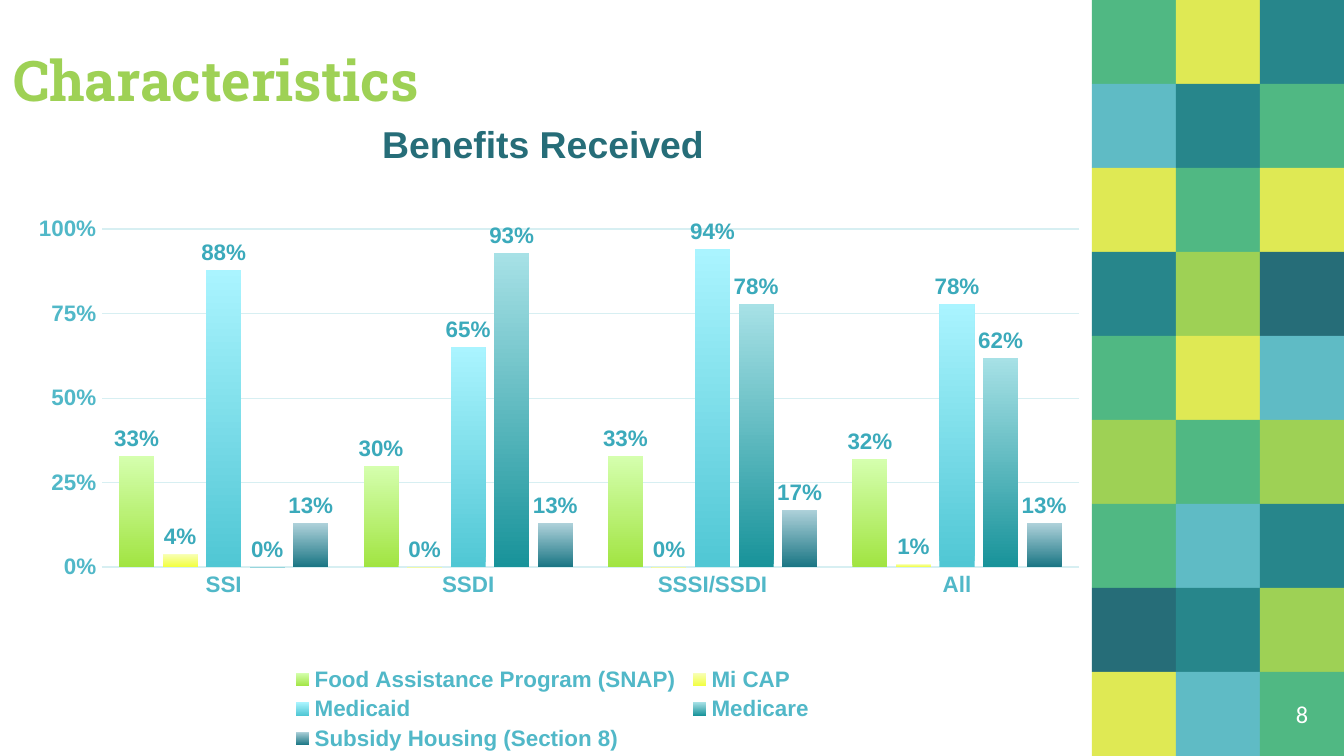
from lxml.etree import SubElement
from pptx import Presentation
from pptx.chart.data import CategoryChartData
from pptx.dml.color import RGBColor
from pptx.enum.chart import XL_CHART_TYPE as ChartType, XL_LABEL_POSITION as LabelPosition
from pptx.enum.chart import XL_LEGEND_POSITION as LegendPosition, XL_TICK_MARK as TickMark
from pptx.enum.shapes import MSO_SHAPE as Preset
from pptx.enum.text import MSO_ANCHOR as Anchor, PP_ALIGN as Align
from pptx.oxml.ns import qn
from pptx.util import Pt

GREEN = RGBColor(0x50, 0xB8, 0x83)
YELLOW = RGBColor(0xDF, 0xE9, 0x54)
TEAL = RGBColor(0x27, 0x86, 0x8B)
BLUE = RGBColor(0x5F, 0xBB, 0xC5)
LIME = RGBColor(0x9E, 0xD1, 0x55)
DARK = RGBColor(0x26, 0x6D, 0x78)
WHITE = RGBColor(0xFF, 0xFF, 0xFF)
AXIS_TEXT = RGBColor(0x51, 0xB8, 0xC8)
LABEL_TEXT = RGBColor(0x3B, 0xAA, 0xBB)
GRID = RGBColor(0xD7, 0xEF, 0xF2)

TILE = 45
MOSAIC_LEFT = 585
MOSAIC = [
    (GREEN, YELLOW, TEAL),
    (BLUE, TEAL, GREEN),
    (YELLOW, GREEN, YELLOW),
    (TEAL, LIME, DARK),
    (GREEN, YELLOW, BLUE),
    (LIME, GREEN, LIME),
    (GREEN, BLUE, TEAL),
    (DARK, TEAL, LIME),
    (YELLOW, BLUE, GREEN),
]

TEXTS = [
    ("Benefits Received", (0, 57.5, 582, 44), Anchor.TOP,
     {"alignment": Align.CENTER, "space_before": Pt(6)},
     {"name": "Arial", "size": Pt(20), "bold": True}, DARK),
    ("Characteristics", (0, 0, 505, 67.5), Anchor.BOTTOM,
     {"alignment": Align.LEFT},
     {"name": "Roboto Slab", "size": Pt(30), "bold": True}, LIME),
    ("8", (675, 360, TILE, TILE), Anchor.MIDDLE,
     {"alignment": Align.CENTER},
     {"name": "Calibri", "size": Pt(13), "bold": False}, WHITE),
]

CHART_BOX = (2, 109.5, 582, 295.5)
PLOT_LAYOUT = {"layoutTarget": "inner", "xMode": "edge", "yMode": "edge",
               "x": 0.09, "y": 0.045, "w": 0.9, "h": 0.613}
LEGEND_LAYOUT = {"xMode": "edge", "yMode": "edge",
                 "x": 0.26, "y": 0.83, "w": 0.49, "h": 0.17}
CATEGORIES = ["SSI", "SSDI", "SSSI/SSDI", "All"]
SERIES = [
    ("Food Assistance Program (SNAP)", (0.33, 0.3, 0.33, 0.32), ("A1E442", "D5FFAE")),
    ("Mi CAP", (0.04, 0, 0, 0.01), ("F2FF3E", "F8FFB8")),
    ("Medicaid", (0.88, 0.65, 0.94, 0.78), ("50C7D4", "AAF4FF")),
    ("Medicare", (0, 0.93, 0.78, 0.62), ("18939A", "A7E1E6")),
    ("Subsidy Housing (Section 8)", (0.13, 0.13, 0.17, 0.13), ("1A7684", "AED1DA")),
]
CHART_FONT = {"name": "Arial", "size": Pt(12), "bold": True}


def apply(target, values):
    for name, value in values.items():
        setattr(target, name, value)


def style_font(font, values, color):
    apply(font, values)
    font.color.rgb = color


def points(box):
    return [Pt(length) for length in box]


def add_mosaic(slide):
    for row, colors in enumerate(MOSAIC):
        for column, color in enumerate(colors):
            box = (MOSAIC_LEFT + column * TILE, row * TILE, TILE, TILE)
            tile = slide.shapes.add_shape(Preset.RECTANGLE, *points(box))
            tile.shadow.inherit = False
            tile.fill.solid()
            tile.fill.fore_color.rgb = color
            tile.line.fill.background()


def add_text(slide, text, box, anchor, paragraph_format, font_format, color):
    frame = slide.shapes.add_textbox(*points(box)).text_frame
    apply(frame, {"word_wrap": True, "vertical_anchor": anchor})
    apply(frame, {f"margin_{side}": Pt(7.2) for side in ("left", "top", "right", "bottom")})
    paragraph = frame.paragraphs[0]
    apply(paragraph, paragraph_format)
    run = paragraph.add_run()
    run.text = text
    style_font(run.font, font_format, color)


def set_layout(parent, position, values):
    for old in parent.findall(qn("c:layout")):
        parent.remove(old)
    layout = SubElement(parent, qn("c:layout"))
    manual = SubElement(layout, qn("c:manualLayout"))
    for name, value in values.items():
        SubElement(manual, qn(f"c:{name}")).set("val", str(value))
    parent.insert(position, layout)


def add_benefits_chart(slide):
    data = CategoryChartData(number_format="0%")
    data.categories = CATEGORIES
    for name, values, _ in SERIES:
        data.add_series(name, values)
    chart = slide.shapes.add_chart(ChartType.COLUMN_CLUSTERED, *points(CHART_BOX), data).chart
    apply(chart, {"has_title": False, "has_legend": True})
    style_font(chart.font, {"name": "Arial", "size": Pt(10)}, DARK)

    apply(chart.legend, {"position": LegendPosition.BOTTOM, "include_in_layout": False})
    style_font(chart.legend.font, CHART_FONT, AXIS_TEXT)
    set_layout(chart.legend._element, 1, LEGEND_LAYOUT)
    set_layout(chart.plots[0]._element.getparent(), 0, PLOT_LAYOUT)

    category_axis, value_axis = chart.category_axis, chart.value_axis
    for axis in (category_axis, value_axis):
        apply(axis, {"major_tick_mark": TickMark.NONE, "minor_tick_mark": TickMark.NONE})
        style_font(axis.tick_labels.font, CHART_FONT, AXIS_TEXT)
    apply(value_axis, {"minimum_scale": 0, "maximum_scale": 1, "major_unit": 0.25,
                       "has_major_gridlines": True})
    apply(value_axis.tick_labels, {"number_format": "0%", "number_format_is_linked": False})
    value_axis.format.line.fill.background()
    for line, width in ((category_axis.format.line, 1),
                        (value_axis.major_gridlines.format.line, 0.75)):
        line.color.rgb = GRID
        line.width = Pt(width)

    plot = chart.plots[0]
    apply(plot, {"gap_width": 100, "overlap": -24, "vary_by_categories": False})
    for series, (_, _, colors) in zip(plot.series, SERIES):
        fill = series.format.fill
        fill.gradient()
        fill.gradient_angle = 90
        for stop, color in zip(fill.gradient_stops, colors):
            stop.color.rgb = RGBColor.from_string(color)
        labels = series.data_labels
        apply(labels, {"show_value": True, "position": LabelPosition.OUTSIDE_END,
                       "number_format": "0%", "number_format_is_linked": False})
        style_font(labels.font, CHART_FONT, LABEL_TEXT)


def main():
    presentation = Presentation()
    apply(presentation, {"slide_width": Pt(720), "slide_height": Pt(405)})
    slide = presentation.slides.add_slide(presentation.slide_layouts[6])
    add_mosaic(slide)
    for text in TEXTS:
        add_text(slide, *text)
    add_benefits_chart(slide)
    presentation.save("out.pptx")


if __name__ == "__main__":
    main()
